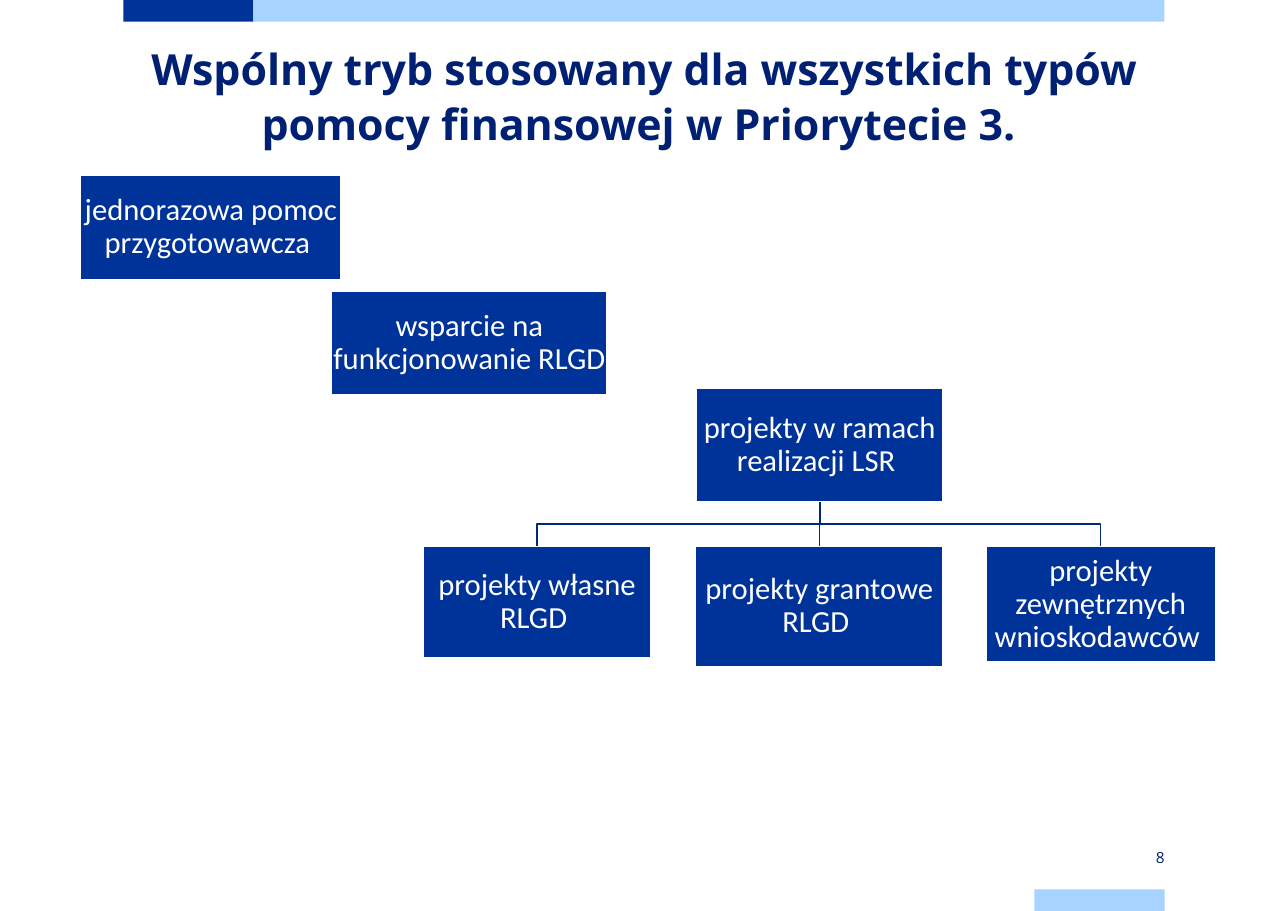
from pptx import Presentation
from pptx.dml.color import RGBColor
from pptx.enum.shapes import MSO_SHAPE
from pptx.enum.text import MSO_ANCHOR, MSO_AUTO_SIZE, PP_ALIGN
from pptx.util import Pt

RECTANGLE = MSO_SHAPE.RECTANGLE
TOP, MIDDLE = MSO_ANCHOR.TOP, MSO_ANCHOR.MIDDLE
CENTER, RIGHT = PP_ALIGN.CENTER, PP_ALIGN.RIGHT
NO_AUTOFIT = MSO_AUTO_SIZE.NONE

BLUE = RGBColor(0x00, 0x33, 0x99)
LIGHT_BLUE = RGBColor(0xA6, 0xD3, 0xFF)
NAVY = RGBColor(0x00, 0x20, 0x73)
BRANCH_BLUE = RGBColor(0x00, 0x29, 0x7B)
WHITE = RGBColor(0xFF, 0xFF, 0xFF)

PAGE_WIDTH, PAGE_HEIGHT = 841.7, 595.4
MARGIN, CONTENT_WIDTH = 80.6, 680.4
BAR_HEIGHT, ACCENT_WIDTH = 14.2, 85

STEPS = [
    ("jednorazowa pomoc przygotowawcza ", (0, 0, 170.4, 68.1)),
    ("wsparcie na funkcjonowanie RLGD ", (164.2, 75.5, 179.9, 68.1)),
]
PARENT = ("projekty w ramach realizacji LSR ", (402.4, 139.2, 161.4, 74.2))
CHILDREN = [
    ("projekty własne RLGD ", (224, 242.4, 148.8, 72.7)),
    ("projekty grantowe RLGD ", (401.8, 242.4, 162, 78.5)),
    ("projekty zewnętrznych wnioskodawców ", (591.8, 242.4, 149.8, 75.6)),
]


def add_box(page, box, color):
    shape = page.shapes.add_shape(RECTANGLE, *map(Pt, box))
    shape.shadow.inherit = False
    shape.fill.solid()
    shape.fill.fore_color.rgb = color
    shape.line.fill.background()
    return shape


def set_text(shape, text, size, color, font_name, align, anchor, insets):
    frame = shape.text_frame
    frame.word_wrap = True
    frame.auto_size = NO_AUTOFIT
    frame.vertical_anchor = anchor
    frame.margin_left = frame.margin_right = Pt(insets[0])
    frame.margin_top = frame.margin_bottom = Pt(insets[1])
    frame.text = text
    para = frame.paragraphs[0]
    para.alignment = align
    para.font.size = Pt(size)
    para.font.name = font_name
    para.font.color.rgb = color
    return para


def add_bars(page, left, width, bottom):
    add_box(page, (left, 0, ACCENT_WIDTH, BAR_HEIGHT), BLUE)
    add_box(page, (left + ACCENT_WIDTH, 0, width - ACCENT_WIDTH, BAR_HEIGHT), LIGHT_BLUE)
    add_box(page, (left + width - ACCENT_WIDTH, bottom - BAR_HEIGHT,
                   ACCENT_WIDTH, BAR_HEIGHT), LIGHT_BLUE)


def add_title(page, box, text):
    title = page.shapes.title
    title.left, title.top, title.width, title.height = map(Pt, box)
    para = set_text(title, text, 28, NAVY, "Open Sans", CENTER, TOP, (0, 0))
    para.line_spacing = Pt(36)
    para.font.bold = True


def add_node(page, left, top, node):
    text, (x, y, width, height) = node
    shape = add_box(page, (left + x, top + y, width, height), BLUE)
    shape.line.color.rgb = WHITE
    shape.line.width = Pt(1)
    para = set_text(shape, text, 20, WHITE, "Calibri", CENTER, MIDDLE, (0.7, 0.7))
    para.line_spacing = 0.9
    return shape


def add_branch(page, parent, child):
    start_x, start_y = parent.left + parent.width // 2, parent.top + parent.height
    end_x, end_y = child.left + child.width // 2, child.top
    middle_y = (start_y + end_y) // 2
    builder = page.shapes.build_freeform(start_x, start_y)
    builder.add_line_segments(
        [(start_x, middle_y), (end_x, middle_y), (end_x, end_y)], close=False)
    branch = builder.convert_to_shape()
    branch.shadow.inherit = False
    branch.fill.background()
    branch.line.color.rgb = BRANCH_BLUE
    branch.line.width = Pt(1)


def add_diagram(page, left, top):
    for step in STEPS:
        add_node(page, left, top, step)
    parent = add_node(page, left, top, PARENT)
    for node in CHILDREN:
        add_branch(page, parent, add_node(page, left, top, node))


def add_page_number(page, box, number):
    shape = page.shapes.add_textbox(*map(Pt, box))
    set_text(shape, number, 10, NAVY, "Open Sans", RIGHT, MIDDLE, (0, 5.7))


def main():
    deck = Presentation()
    deck.slide_width, deck.slide_height = Pt(PAGE_WIDTH), Pt(PAGE_HEIGHT)
    page = deck.slides.add_slide(deck.slide_layouts[5])
    add_bars(page, MARGIN, CONTENT_WIDTH, PAGE_HEIGHT)
    add_title(page, (MARGIN, 25.2, CONTENT_WIDTH, 90.7),
              "Wspólny tryb stosowany dla wszystkich typów "
              "pomocy finansowej w Priorytecie 3. ")
    add_diagram(page, 52.6, 114.7)
    add_page_number(page, (MARGIN + CONTENT_WIDTH - ACCENT_WIDTH, 553,
                           ACCENT_WIDTH, BAR_HEIGHT), "8")
    deck.save("out.pptx")


if __name__ == "__main__":
    main()
